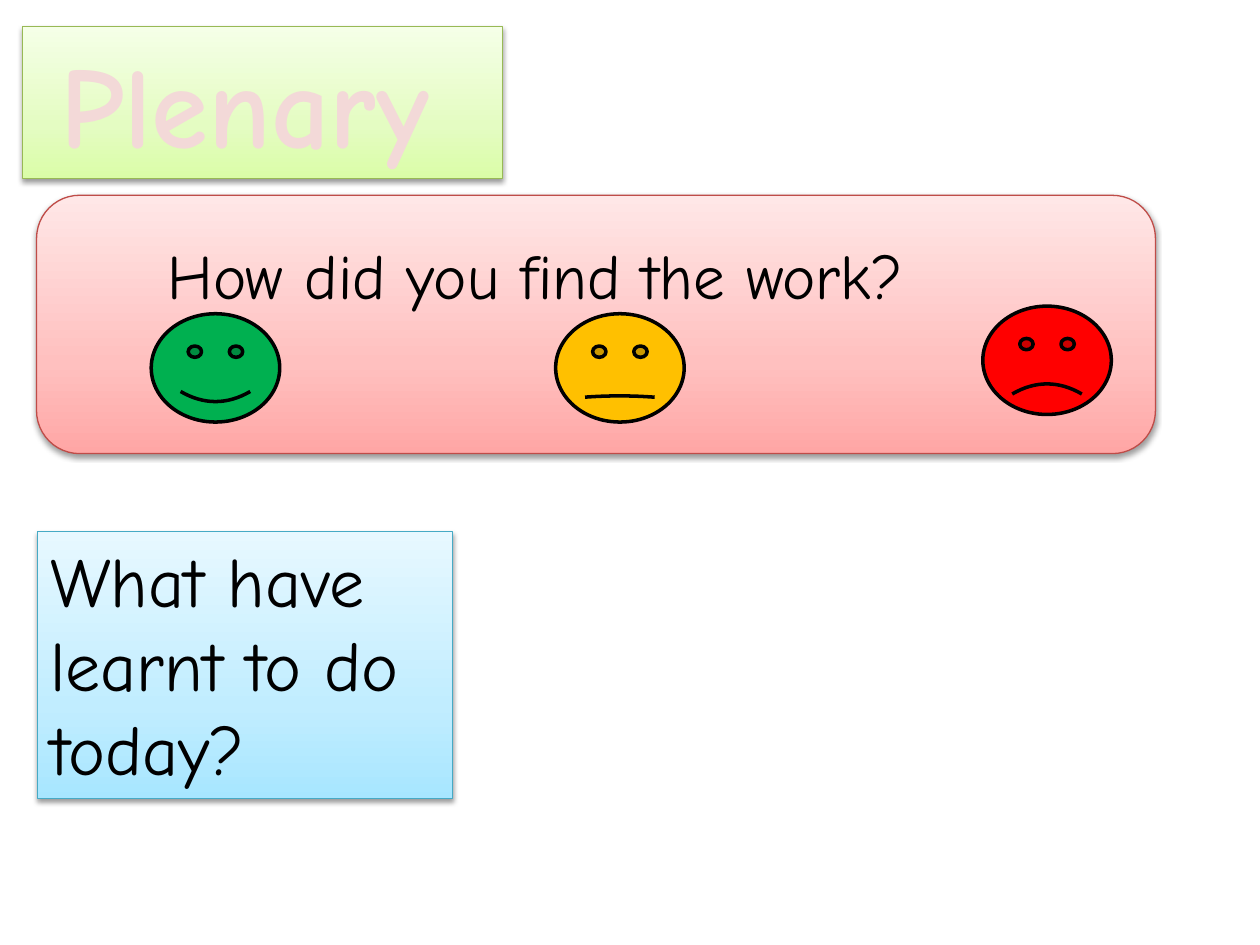
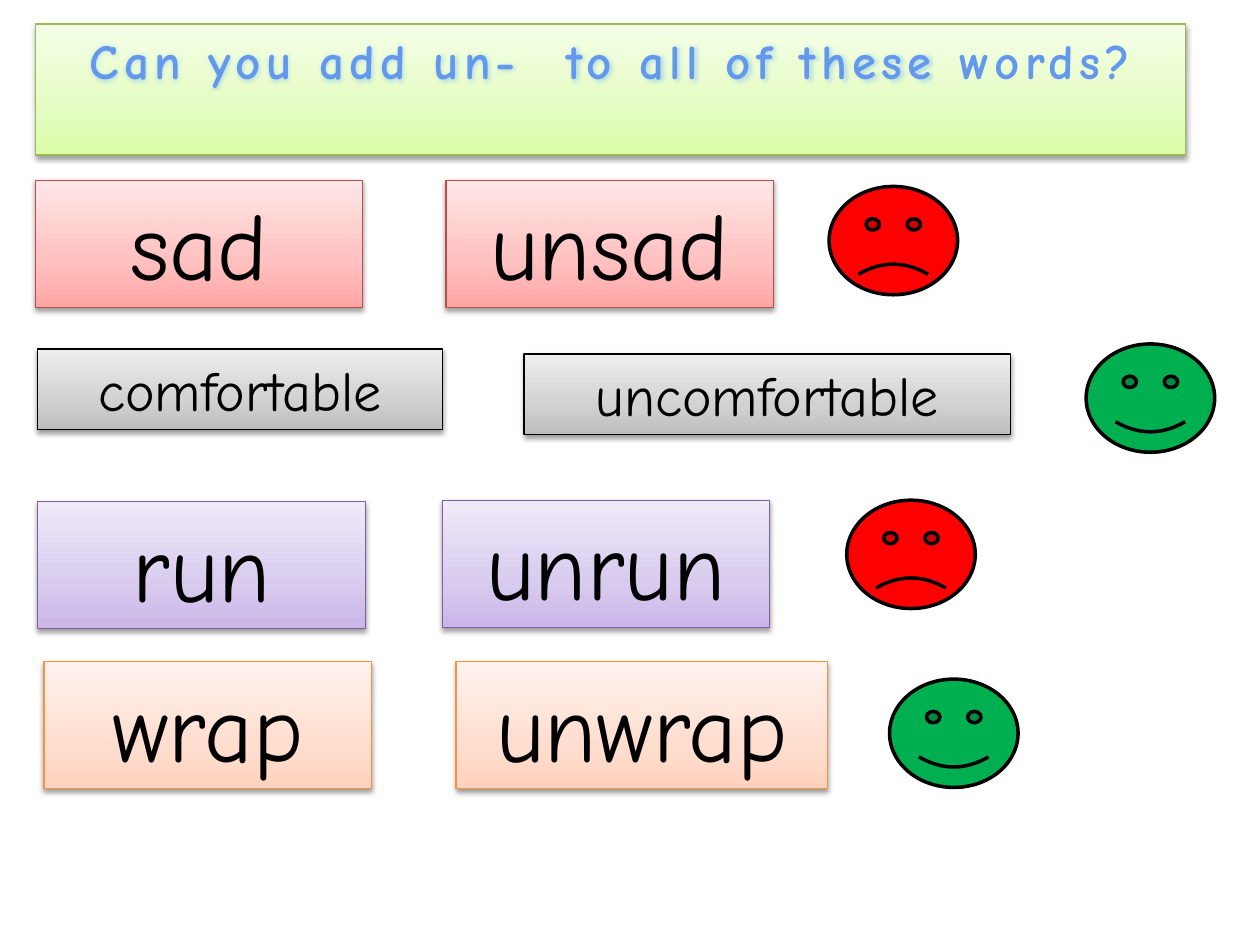
from dataclasses import dataclass
from typing import Optional

from lxml import etree
from pptx import Presentation
from pptx.dml.color import RGBColor
from pptx.enum.shapes import MSO_SHAPE
from pptx.enum.text import MSO_ANCHOR, PP_ALIGN
from pptx.oxml.ns import qn
from pptx.util import Inches, Pt

RECT, ROUNDED = MSO_SHAPE.RECTANGLE, MSO_SHAPE.ROUNDED_RECTANGLE
SMILEY = MSO_SHAPE.SMILEY_FACE
CENTER, LEFT = PP_ALIGN.CENTER, PP_ALIGN.LEFT
TOP = MSO_ANCHOR.TOP

FONT = "Comic Neue"
BLACK = RGBColor(0x00, 0x00, 0x00)
GREEN_FACE = RGBColor(0x00, 0xB0, 0x50)
AMBER_FACE = RGBColor(0xFF, 0xC0, 0x00)
RED_FACE = RGBColor(0xFF, 0x00, 0x00)
GLOW = RGBColor(0x53, 0xA2, 0xFF)

# The slide is laid out on 100 columns by 75 rows
SLIDE_W, SLIDE_H = Inches(10), Inches(7.5)
COL, ROW = SLIDE_W / 100, SLIDE_H / 75
FACE_COLS, FACE_ROWS = 10.2, 8.6


@dataclass(frozen=True)
class Stop:
    percent: int
    color: RGBColor


@dataclass(frozen=True)
class Theme:
    line: RGBColor
    stops: tuple[Stop, ...]


@dataclass(frozen=True)
class Mood:
    color: RGBColor
    smile: float


@dataclass(frozen=True)
class Lettering:
    """Decorated heading text: gradient, outline, spacing and glow."""
    stops: tuple[Stop, ...]
    outline: RGBColor
    outline_pt: float
    spacing_pt: float = 0
    glow_pt: float = 0


@dataclass(frozen=True)
class Area:
    col: float
    row: float
    cols: float
    rows: float

    def emu(self) -> tuple[int, int, int, int]:
        return (round(self.col * COL), round(self.row * ROW),
                round(self.cols * COL), round(self.rows * ROW))


@dataclass(frozen=True)
class Caption:
    text: str
    size: int
    align: PP_ALIGN = CENTER
    lettering: Optional[Lettering] = None
    extra_right: float = 0  # columns added to the right inset


@dataclass(frozen=True)
class WordPair:
    word: str
    size: int
    theme: Theme
    word_area: Area
    un_area: Area
    mood: Mood
    face_at: tuple[float, float]


def stops(*pairs: tuple[int, str]) -> tuple[Stop, ...]:
    return tuple(Stop(p, RGBColor.from_string(c)) for p, c in pairs)


def theme(line: str, low: str, middle: str, high: str) -> Theme:
    return Theme(RGBColor.from_string(line),
                 stops((0, low), (35, middle), (100, high)))


LIME = theme("98B955", "DAFDA7", "E4FCC2", "F5FFE7")
PINK = theme("BF4C48", "FFA6A5", "FFC0BF", "FFE7E7")
SKY = theme("46AAC5", "A7E6FF", "C1EDFF", "E7F8FF")
GREY = theme("000000", "BDBDBD", "D1D1D1", "EEEEEE")
VIOLET = theme("7D60A0", "C9B5E8", "D8CBEE", "F0EAF9")
PEACH = theme("F69240", "FFD2BD", "FFDED0", "FFF2ED")

HAPPY = Mood(GREEN_FACE, 0.047)
UNSURE = Mood(AMBER_FACE, -0.006)
SAD = Mood(RED_FACE, -0.047)

ROSE_LETTERS = Lettering(stops((10, "FBF3F3"), (60, "F3D9D8"), (100, "E38C8B")),
                         RGBColor(0xD0, 0x2F, 0x2A), 1.93)
BLUE_LETTERS = Lettering(stops((10, "6398ED"), (75, "265EA0")),
                         RGBColor(0xF4, 0xF6, 0xF9), 0.9, 3, 3.6)


def add_child(parent, tag: str, **attributes):
    child = etree.SubElement(parent, qn(tag))
    for key, value in attributes.items():
        child.set(key, str(value))
    return child


def add_color(parent, color: RGBColor, opacity: int = 100) -> None:
    node = add_child(parent, "a:srgbClr", val=color)
    if opacity < 100:
        add_child(node, "a:alpha", val=opacity * 1000)


def set_gradient(fill, owner, ramp: tuple[Stop, ...], angle: int) -> None:
    fill.gradient()
    fill.gradient_angle = angle
    stop_list = owner.find(qn("a:gradFill")).find(qn("a:gsLst"))
    for old in list(stop_list):
        stop_list.remove(old)
    for stop in ramp:
        add_color(add_child(stop_list, "a:gs", pos=stop.percent * 1000), stop.color)


def decorate(run, style: Lettering) -> None:
    run.font.bold = True
    props = run.font._element if hasattr(run.font, "_element") else run._r.get_or_add_rPr()
    set_gradient(run.font.fill, props, style.stops, 270)
    outline = add_child(props, "a:ln", w=Pt(style.outline_pt))
    add_color(add_child(outline, "a:solidFill"), style.outline)
    props.insert(0, outline)
    if style.spacing_pt:
        props.set("spc", str(round(style.spacing_pt * 100)))
    if style.glow_pt:
        effects = add_child(props, "a:effectLst")
        add_color(add_child(effects, "a:glow", rad=Pt(style.glow_pt)), GLOW, 35)
        props.find(qn("a:gradFill")).addnext(effects)


def write(shape, caption: Caption) -> None:
    frame = shape.text_frame
    frame_format = {
        "word_wrap": True, "vertical_anchor": TOP,
        "margin_left": Inches(0.1), "margin_top": Inches(0.05),
        "margin_bottom": Inches(0.05),
        "margin_right": Inches(0.1) + round(caption.extra_right * COL),
    }
    for key, value in frame_format.items():
        setattr(frame, key, value)
    paragraph = frame.paragraphs[0]
    paragraph.alignment = caption.align
    run = paragraph.add_run()
    run.text = caption.text
    for key, value in {"name": FONT, "size": Pt(caption.size)}.items():
        setattr(run.font, key, value)
    if caption.lettering:
        decorate(run, caption.lettering)
    else:
        run.font.color.rgb = BLACK


def draw_panel(slide, area: Area, look: Theme,
               caption: Optional[Caption] = None, outline: MSO_SHAPE = RECT) -> None:
    panel = slide.shapes.add_shape(outline, *area.emu())
    props = panel._element.spPr
    set_gradient(panel.fill, props, look.stops, 90)
    panel.line.color.rgb = look.line
    panel.line.width = Pt(0.75)
    # Soft shadow below the panel
    panel.shadow.inherit = False
    shadow = add_child(props.find(qn("a:effectLst")), "a:outerShdw",
                       blurRad=Pt(3.1), dist=Pt(1.6), dir=5400000, rotWithShape=0)
    add_color(shadow, BLACK, 38)
    if caption:
        write(panel, caption)


def draw_face(slide, col: float, row: float, mood: Mood) -> None:
    face = slide.shapes.add_shape(SMILEY, *Area(col, row, FACE_COLS, FACE_ROWS).emu())
    face.shadow.inherit = False
    face.adjustments[0] = mood.smile
    face.fill.solid()
    face.fill.fore_color.rgb = mood.color
    face.line.color.rgb = BLACK
    face.line.width = Pt(2)


def build_plenary(slide) -> None:
    # Feedback band with its question and three faces
    draw_panel(slide, Area(2.9, 15.5, 88.8, 20.5), PINK, outline=ROUNDED)
    question = slide.shapes.add_textbox(*Area(7.9, 18.3, 72.4, 7.1).emu())
    write(question, Caption("How did you find the work?", 36, extra_right=3.2))
    for col, row, mood in ((44.1, 24.9, UNSURE), (78, 24.3, SAD), (12, 24.9, HAPPY)):
        draw_face(slide, col, row, mood)
    # Title and closing question
    draw_panel(slide, Area(1.8, 2.1, 38.1, 12.1), LIME,
               Caption("Plenary", 66, lettering=ROSE_LETTERS, extra_right=2.8))
    draw_panel(slide, Area(3, 42.2, 32.9, 21.2), SKY,
               Caption("What have learnt to do today?", 40, LEFT))


WORD_PAIRS = (
    WordPair("sad", 54, PINK, Area(2.8, 14.3, 26, 10.1),
             Area(35.4, 14.3, 26, 10.1), SAD, (65.8, 14.8)),
    WordPair("comfortable", 32, GREY, Area(3, 27.7, 32.1, 6.4),
             Area(41.6, 28.1, 38.6, 6.4), HAPPY, (86.2, 27.3)),
    WordPair("run", 54, VIOLET, Area(3, 39.8, 26, 10.1),
             Area(35.1, 39.7, 26, 10.1), SAD, (67.2, 39.7)),
    WordPair("wrap", 54, PEACH, Area(3.5, 52.5, 26, 10.1),
             Area(36.2, 52.5, 29.5, 10.1), HAPPY, (70.6, 53.9)),
)


def build_un_words(slide) -> None:
    draw_panel(slide, Area(2.8, 1.9, 91.3, 10.4), LIME,
               Caption("Can you add un-  to all of these words?", 28,
                       lettering=BLUE_LETTERS))
    # Each row: the word, the word with un-, and the verdict
    for pair in WORD_PAIRS:
        draw_panel(slide, pair.word_area, pair.theme, Caption(pair.word, pair.size))
        draw_panel(slide, pair.un_area, pair.theme, Caption("un" + pair.word, pair.size))
        draw_face(slide, *pair.face_at, pair.mood)


def main() -> None:
    deck = Presentation()
    deck.slide_width, deck.slide_height = SLIDE_W, SLIDE_H
    blank = deck.slide_layouts[6]
    for build in (build_plenary, build_un_words):
        build(deck.slides.add_slide(blank))
    deck.save("out.pptx")


if __name__ == "__main__":
    main()
